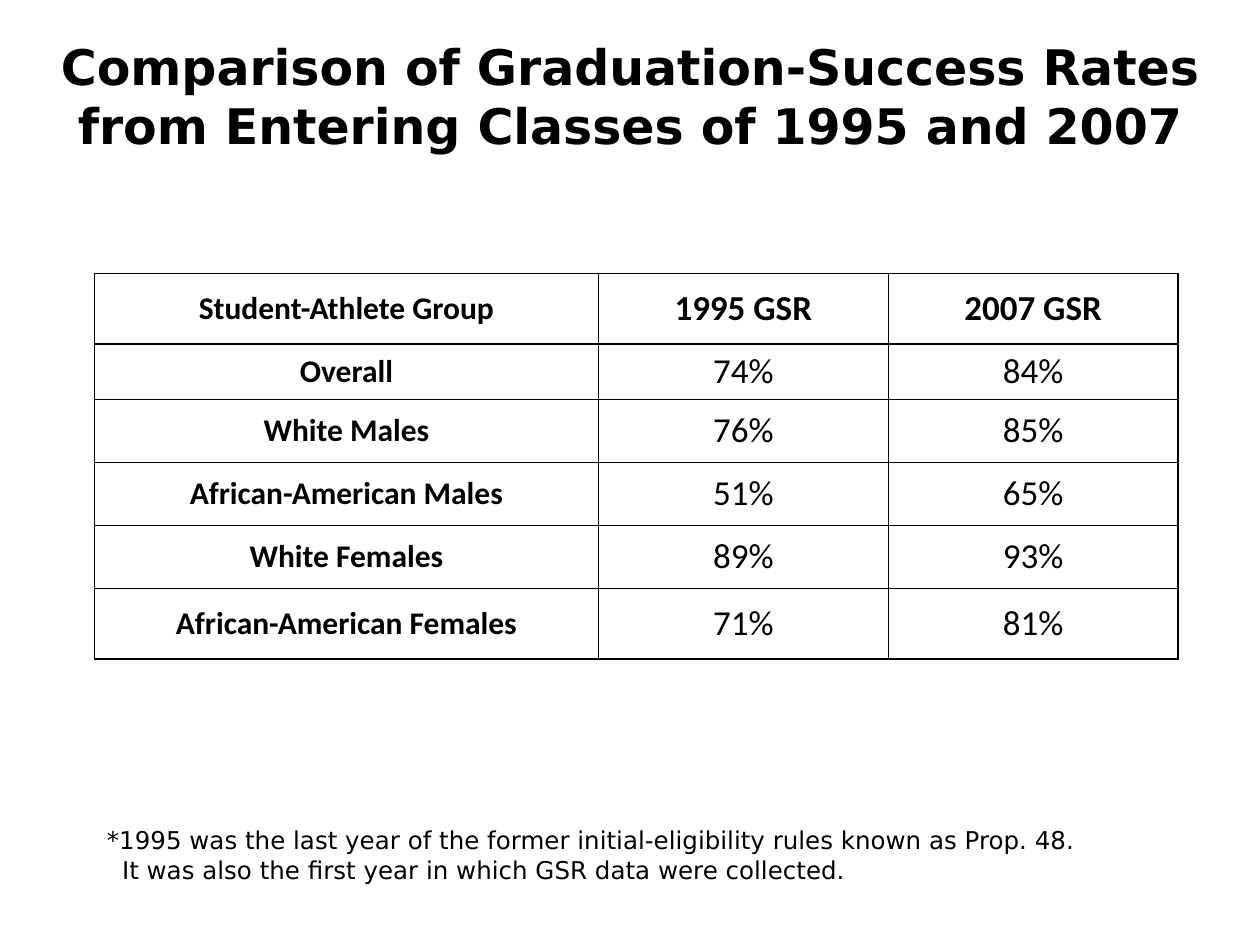
"""Build a slide comparing graduation-success rates of two entering classes."""
from lxml import etree
from pptx import Presentation
from pptx import util as u
from pptx.dml.color import RGBColor
from pptx.enum import text
from pptx.oxml import ns

BLACK = RGBColor(0, 0, 0)
MID = text.MSO_ANCHOR.MIDDLE
ROWS = [
    ("Student-Athlete Group", "1995 GSR", "2007 GSR"),
    ("Overall", "74%", "84%"),
    ("White Males", "76%", "85%"),
    ("African-American Males", "51%", "65%"),
    ("White Females", "89%", "93%"),
    ("African-American Females", "71%", "81%"),
]
WIDTHS = (4, 2.3, 2.3)
HEIGHTS = (0.56, 0.44, 0.5, 0.5, 0.5, 0.56)
NOTES = (
    "*1995 was the last year of the former initial-eligibility rules known as Prop. 48.",
    "It was also the first year in which GSR data were collected.",
)


def style(par, face, size, bold=False, align=text.PP_ALIGN.CENTER):
    par.alignment = align
    font = par.font
    font.name, font.size, font.bold = face, u.Pt(size), bold
    font.color.rgb = BLACK


def border(cell):
    props = cell._tc.get_or_add_tcPr()
    for i, side in enumerate(("lnL", "lnR", "lnT", "lnB")):
        line = etree.Element(ns.qn("a:" + side), w=str(u.Pt(1)))
        fill = etree.SubElement(line, ns.qn("a:solidFill"))
        etree.SubElement(fill, ns.qn("a:srgbClr"), val=str(BLACK))
        props.insert(i, line)


prs = Presentation()
prs.slide_width, prs.slide_height = u.Inches(10), u.Inches(7.5)
slide = prs.slides.add_slide(prs.slide_layouts[6])
add = slide.shapes

title = add.add_textbox(0, u.Inches(0.17), prs.slide_width, u.Inches(1.17)).text_frame
title.word_wrap = True
title.vertical_anchor = MID
title.text = "Comparison of Graduation-Success Rates from Entering Classes of 1995 and 2007"
style(title.paragraphs[0], "DejaVu Sans", 28, True)

left = u.Inches(0.75)
table = add.add_table(
    len(ROWS), len(WIDTHS), left, u.Inches(2.17),
    u.Inches(sum(WIDTHS)), u.Inches(sum(HEIGHTS)),
).table
table.horz_banding = False
for col, width in zip(table.columns, WIDTHS):
    col.width = u.Inches(width)
for r, (row, height) in enumerate(zip(ROWS, HEIGHTS)):
    table.rows[r].height = u.Inches(height)
    for c, value in enumerate(row):
        cell = table.cell(r, c)
        cell.text = value
        cell.vertical_anchor = MID
        cell.fill.background()
        border(cell)
        style(cell.text_frame.paragraphs[0], "Calibri", 20 if c else 18, r == 0 or c == 0)

note = add.add_textbox(left, u.Inches(6.5), u.Inches(8.58), u.Inches(0.57)).text_frame
note.word_wrap = True
note.text = "\n".join(NOTES)
for par in note.paragraphs:
    style(par, "DejaVu Sans", 14, align=text.PP_ALIGN.LEFT)
note.paragraphs[1]._p.get_or_add_pPr().set("marL", str(u.Inches(0.12)))

prs.save("out.pptx")
